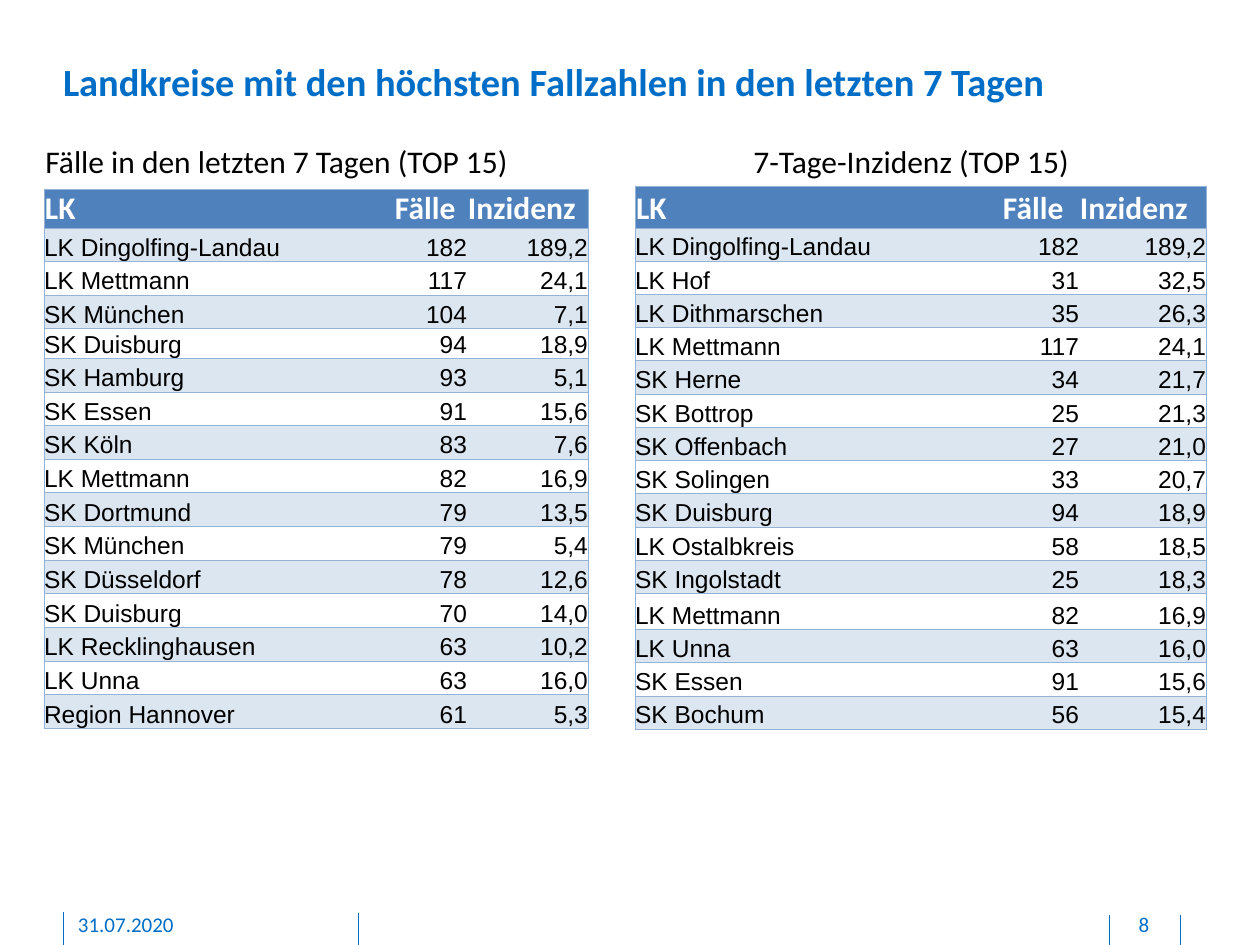
from lxml.etree import SubElement
from pptx import Presentation
from pptx.dml.color import RGBColor
from pptx.enum.shapes import MSO_CONNECTOR
from pptx.enum.text import MSO_ANCHOR, PP_ALIGN
from pptx.oxml.ns import qn
from pptx.util import Emu, Pt

PX = 914400 // 126
BLUE, HEADER_BLUE, BAND, BORDER = "006EC7", "4F81BD", "DCE6F1", "95B3D7"
WHITE, BLACK = "FFFFFF", "000000"
NO_STYLE = "{2D5ABB26-0587-4C30-8999-92F81FD0307C}"

# Content
TITLE = "Landkreise mit den höchsten Fallzahlen in den letzten 7 Tagen"
HEADINGS = ("LK", "Fälle", "Inzidenz")
CASES = [
    ("LK Dingolfing-Landau", "182", "189,2"),
    ("LK Mettmann", "117", "24,1"),
    ("SK München", "104", "7,1"),
    ("SK Duisburg", "94", "18,9"),
    ("SK Hamburg", "93", "5,1"),
    ("SK Essen", "91", "15,6"),
    ("SK Köln", "83", "7,6"),
    ("LK Mettmann", "82", "16,9"),
    ("SK Dortmund", "79", "13,5"),
    ("SK München", "79", "5,4"),
    ("SK Düsseldorf", "78", "12,6"),
    ("SK Duisburg", "70", "14,0"),
    ("LK Recklinghausen", "63", "10,2"),
    ("LK Unna", "63", "16,0"),
    ("Region Hannover", "61", "5,3"),
]
INCIDENCE = [
    ("LK Dingolfing-Landau", "182", "189,2"),
    ("LK Hof", "31", "32,5"),
    ("LK Dithmarschen", "35", "26,3"),
    ("LK Mettmann", "117", "24,1"),
    ("SK Herne", "34", "21,7"),
    ("SK Bottrop", "25", "21,3"),
    ("SK Offenbach", "27", "21,0"),
    ("SK Solingen", "33", "20,7"),
    ("SK Duisburg", "94", "18,9"),
    ("LK Ostalbkreis", "58", "18,5"),
    ("SK Ingolstadt", "25", "18,3"),
    ("LK Mettmann", "82", "16,9"),
    ("LK Unna", "63", "16,0"),
    ("SK Essen", "91", "15,6"),
    ("SK Bochum", "56", "15,4"),
]
# Table rows, left, top, total height, column widths, {row: special height}
TABLES = [
    (CASES, 44, 189, 538, (350, 73, 121), {0: 39, 4: 28}),
    (INCIDENCE, 635, 186, 544, (367, 77, 127), {0: 42, 12: 36}),
]
# Caption text, left, top, width, height
CAPTIONS = [
    ("7-Tage-Inzidenz (TOP 15)", 741, 136, 345, 50),
    ("Fälle in den letzten 7 Tagen (TOP 15)", 33, 136, 494, 50),
]
# Footer text, left, width, alignment
FOOTERS = [
    ("31.07.2020", 78, 256, PP_ALIGN.LEFT),
    ("8", 1110, 68, PP_ALIGN.CENTER),
]
FOOTER_LINES = [(358, 913), (63, 912), (1181, 915), (1109, 915)]  # x, top


def px(value):
    return Emu(round(value * PX))


def color(hex_string):
    return RGBColor.from_string(hex_string)


def set_text(frame, text, size, hex_color, font="Calibri", bold=False,
             align=PP_ALIGN.LEFT):
    frame.text = text
    paragraph = frame.paragraphs[0]
    paragraph.alignment = align
    run_font = paragraph.runs[0].font
    run_font.name, run_font.size, run_font.bold = font, Pt(size), bold
    run_font.color.rgb = color(hex_color)


def set_margins(target, left=0, top=0, right=0, bottom=0):
    target.margin_left, target.margin_top = px(left), px(top)
    target.margin_right, target.margin_bottom = px(right), px(bottom)


def add_text(slide, text, box, size, hex_color, **options):
    shape = slide.shapes.add_textbox(*map(px, box))
    set_text(shape.text_frame, text, size, hex_color, **options)
    return shape.text_frame


def add_border(cell, side):
    line = SubElement(cell._tc.get_or_add_tcPr(), qn(f"a:ln{side}"), w=str(Pt(0.5)))
    fill = SubElement(line, qn("a:solidFill"))
    SubElement(fill, qn("a:srgbClr"), val=BORDER)


def format_cell(cell, text, row, column):
    cell.vertical_anchor = MSO_ANCHOR.BOTTOM
    # Frame around the table and rules between rows
    for side in ("LTB", "TB", "RTB")[column]:
        add_border(cell, side)
    if row == 0:
        set_margins(cell, 1, 1, 1)
        set_text(cell.text_frame, text, 18, WHITE, bold=True)
    else:
        set_margins(cell)
        align = PP_ALIGN.RIGHT if column else PP_ALIGN.LEFT
        set_text(cell.text_frame, text, 14, BLACK, font="Arial", align=align)
    if row == 0 or row % 2:
        cell.fill.solid()
        cell.fill.fore_color.rgb = color(BAND if row else HEADER_BLUE)
    else:
        cell.fill.background()


def add_ranking(slide, records, left, top, height, widths, special_heights):
    rows = [HEADINGS, *records]
    frame = slide.shapes.add_table(len(rows), len(widths), px(left), px(top),
                                   px(sum(widths)), px(height))
    table = frame.table
    table.horz_banding = table.first_row = False
    table._tbl.tblPr.find(qn("a:tableStyleId")).text = NO_STYLE
    for column, width in zip(table.columns, widths):
        column.width = px(width)
    # Ordinary rows share the remaining height equally
    regular = ((height - sum(special_heights.values()))
               / (len(rows) - len(special_heights)))
    for row, values in enumerate(rows):
        table.rows[row].height = px(special_heights.get(row, regular))
        for column, text in enumerate(values):
            format_cell(table.cell(row, column), text, row, column)


def main():
    presentation = Presentation()
    presentation.slide_width, presentation.slide_height = px(1260), px(945)
    slide = presentation.slides.add_slide(presentation.slide_layouts[5])

    # Footer rules
    for x, top in FOOTER_LINES:
        line = slide.shapes.add_connector(MSO_CONNECTOR.STRAIGHT,
                                          px(x), px(top), px(x), px(945))
        line.line.color.rgb = color(BLUE)
        line.line.width = Pt(0.5)
        SubElement(line._element.spPr, qn("a:effectLst"))

    # Title
    title = slide.shapes.title
    title.left, title.top, title.width, title.height = map(px, (63, 58, 1115, 47))
    set_margins(title.text_frame)
    title.text_frame.vertical_anchor = MSO_ANCHOR.TOP
    set_text(title.text_frame, TITLE, 22, BLUE, bold=True)

    # Date and page number
    for text, left, width, align in FOOTERS:
        frame = add_text(slide, text, (left, 912, width, 27), 12, BLUE, align=align)
        frame.word_wrap = True
        set_margins(frame, bottom=6)

    # Tables and their captions
    for ranking in TABLES:
        add_ranking(slide, *ranking)
    for text, *box in CAPTIONS:
        add_text(slide, text, box, 18, BLACK).word_wrap = False

    presentation.save("out.pptx")


if __name__ == "__main__":
    main()
